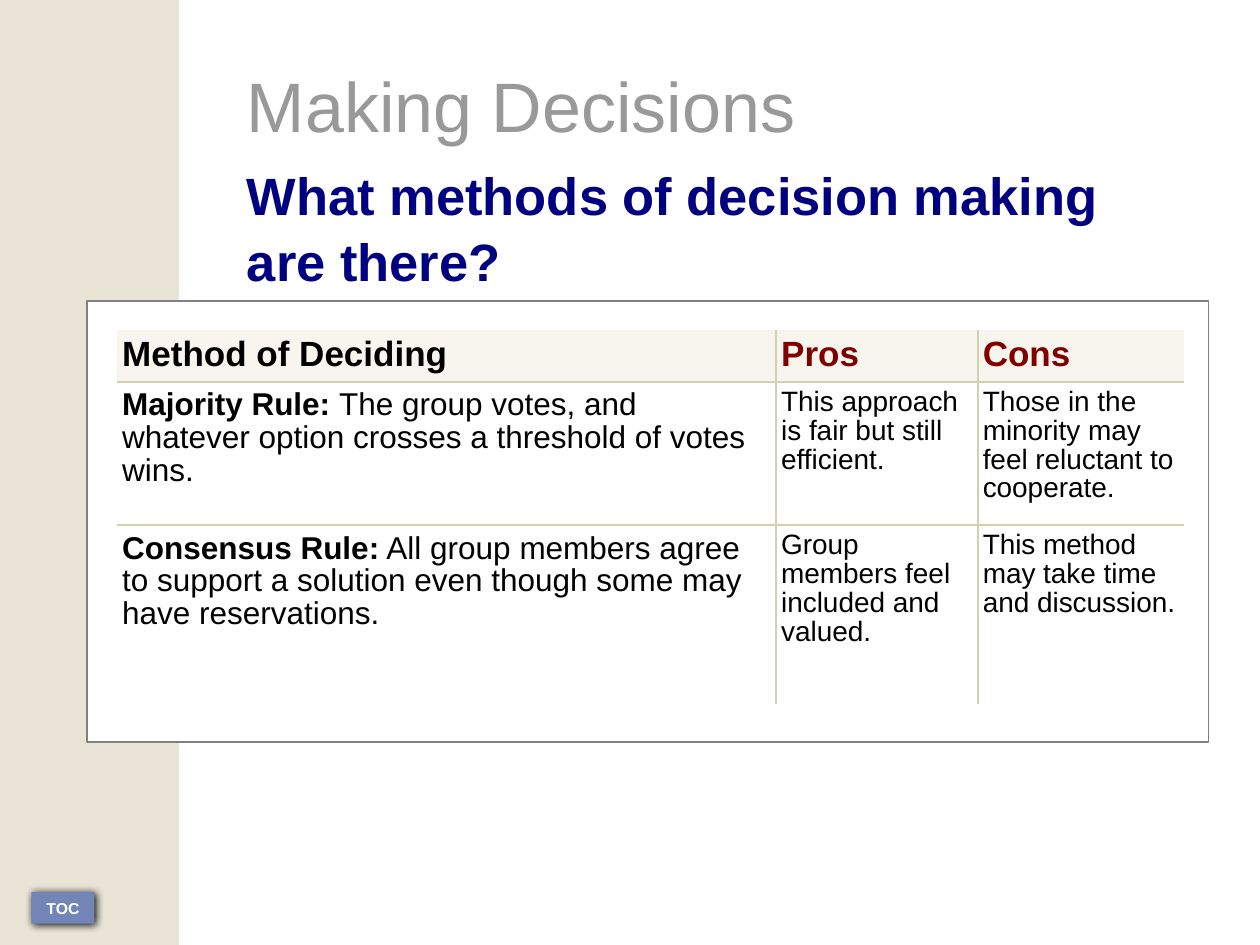
from dataclasses import dataclass

from lxml import etree
from pptx import Presentation
from pptx import util as u
from pptx.dml.color import RGBColor
from pptx.enum import shapes, text
from pptx.oxml import ns


@dataclass(frozen=True)
class Theme:
    font: str = "Arial"
    sand: str = "E9E4D5"
    cream: str = "F7F5ED"
    rule: str = "D1D1B0"
    white: str = "FFFFFF"
    black: str = "000000"
    gray: str = "999999"
    edge: str = "808080"
    navy: str = "000080"
    red: str = "800000"
    blue: str = "7384B6"
    title: float = 40
    ask: float = 30
    head: float = 20
    method: float = 18
    note: float = 16
    button: float = 9


@dataclass(frozen=True)
class Run:
    words: str
    size: float
    color: str = "000000"
    bold: bool = False


@dataclass(frozen=True)
class Box:
    left: float
    top: float
    width: float
    height: float

    def lengths(self) -> tuple:
        return tuple(u.Inches(n) for n in (self.left, self.top, self.width, self.height))


T = Theme()


def method(name: str, rest: str) -> list[Run]:
    return [Run(name, T.method, bold=True), Run(rest, T.method)]


def note(words: str) -> list[Run]:
    return [Run(words, T.note)]


def head(words: str, color: str) -> list[Run]:
    return [Run(words, T.head, color, True)]


WIDTHS = (5.23, 1.6, 1.64)
HEIGHTS = (0.41, 1.14, 1.42)
ROWS = (
    (head("Method of Deciding", T.black), head("Pros", T.red), head("Cons", T.red)),
    (
        method("Majority Rule: ", "The group votes, and whatever option crosses a threshold of votes wins."),
        note("This approach is fair but still efficient."),
        note("Those in the minority may feel reluctant to cooperate."),
    ),
    (
        method("Consensus Rule:", " All group members agree to support a solution even though some may have reservations."),
        note("Group members feel included and valued."),
        note("This method may take time and discussion."),
    ),
)


def sub(parent, tag: str, **attrs: str):
    return etree.SubElement(parent, ns.qn(tag), attrs)


def rgb(code: str) -> RGBColor:
    return RGBColor.from_string(code)


def write(para, runs: list[Run]) -> None:
    for item in runs:
        run = para.add_run()
        run.text = item.words
        font = run.font
        font.name = T.font
        font.size = u.Pt(item.size)
        font.bold = item.bold
        font.color.rgb = rgb(item.color)


def block(slide, box: Box, fill: str, line: str | None = None):
    shape = slide.shapes.add_shape(shapes.MSO_SHAPE.RECTANGLE, *box.lengths())
    shape.shadow.inherit = False
    shape.fill.solid()
    shape.fill.fore_color.rgb = rgb(fill)
    if line:
        shape.line.color.rgb = rgb(line)
        shape.line.width = u.Pt(0.71)
    else:
        shape.line.fill.background()
    return shape


def holder(shape, box: Box, run: Run, pitch: float) -> None:
    shape.left, shape.top, shape.width, shape.height = box.lengths()
    frame = shape.text_frame
    frame.word_wrap = True
    frame.auto_size = text.MSO_AUTO_SIZE.NONE
    frame.vertical_anchor = text.MSO_ANCHOR.TOP
    para = frame.paragraphs[0]
    props = para._p.get_or_add_pPr()
    props.set("marL", "0")
    props.set("indent", "0")
    sub(props, "a:buNone")
    para.alignment = text.PP_ALIGN.LEFT
    para.space_before = u.Pt(0)
    para.line_spacing = pitch
    write(para, [run])


def button(slide) -> None:
    shape = block(slide, Box(0.25, 7.08, 0.5, 0.25), T.blue)
    glow = shape._element.spPr.find(ns.qn("a:effectLst"))
    cast = sub(glow, "a:outerShdw", blurRad=str(u.Pt(5)), dist=str(u.Pt(1.4)),
               dir=str(45 * 60000), algn="ctr", rotWithShape="0")
    sub(cast, "a:srgbClr", val=T.black)
    frame = shape.text_frame
    frame.word_wrap = False
    frame.vertical_anchor = text.MSO_ANCHOR.MIDDLE
    para = frame.paragraphs[0]
    para.alignment = text.PP_ALIGN.CENTER
    write(para, [Run("TOC", T.button, T.white, True)])


def border(cell, sides: dict[str, bool]) -> None:
    props = cell._tc.get_or_add_tcPr()
    for side, shown in sides.items():
        line = sub(props, f"a:ln{side}", w=str(u.Pt(1.42)))
        if shown:
            sub(sub(line, "a:solidFill"), "a:srgbClr", val=T.rule)
        else:
            sub(line, "a:noFill")


def grid(slide) -> None:
    box = Box(0.93, 2.62, sum(WIDTHS), sum(HEIGHTS))
    table = slide.shapes.add_table(len(ROWS), len(WIDTHS), *box.lengths()).table
    table.first_row = table.horz_banding = False
    for col, width in zip(table.columns, WIDTHS):
        col.width = u.Inches(width)
    for row, height in zip(table.rows, HEIGHTS):
        row.height = u.Inches(height)
    for r, row in enumerate(ROWS):
        for c, runs in enumerate(row):
            cell = table.cell(r, c)
            cell.margin_left = cell.margin_right = cell.margin_bottom = u.Inches(0.04)
            cell.margin_top = u.Inches(0.05 if runs[0].size == T.note else 0.06)
            border(cell, {"L": c > 0, "R": c < len(WIDTHS) - 1,
                          "T": r > 0, "B": r < len(ROWS) - 1})
            cell.fill.solid()
            cell.fill.fore_color.rgb = rgb(T.white if r else T.cream)
            para = cell.text_frame.paragraphs[0]
            para.line_spacing = 0.93
            write(para, runs)


def main() -> None:
    deck = Presentation()
    deck.slide_width, deck.slide_height = u.Inches(10), u.Inches(7.5)
    slide = deck.slides.add_slide(deck.slide_layouts[1])
    block(slide, Box(0, 0, 1.42, 7.5), T.sand)
    button(slide)
    holder(slide.shapes.title, Box(1.86, 0.45, 7.64, 0.77),
           Run("Making Decisions", T.title, T.gray), 1)
    holder(slide.placeholders[1], Box(1.86, 1.22, 7.64, 1.15),
           Run("What methods of decision making are there?", T.ask, T.navy, True), 1.05)
    block(slide, Box(0.69, 2.39, 8.9, 3.5), T.white, T.edge)
    grid(slide)
    deck.save("out.pptx")


if __name__ == "__main__":
    main()
